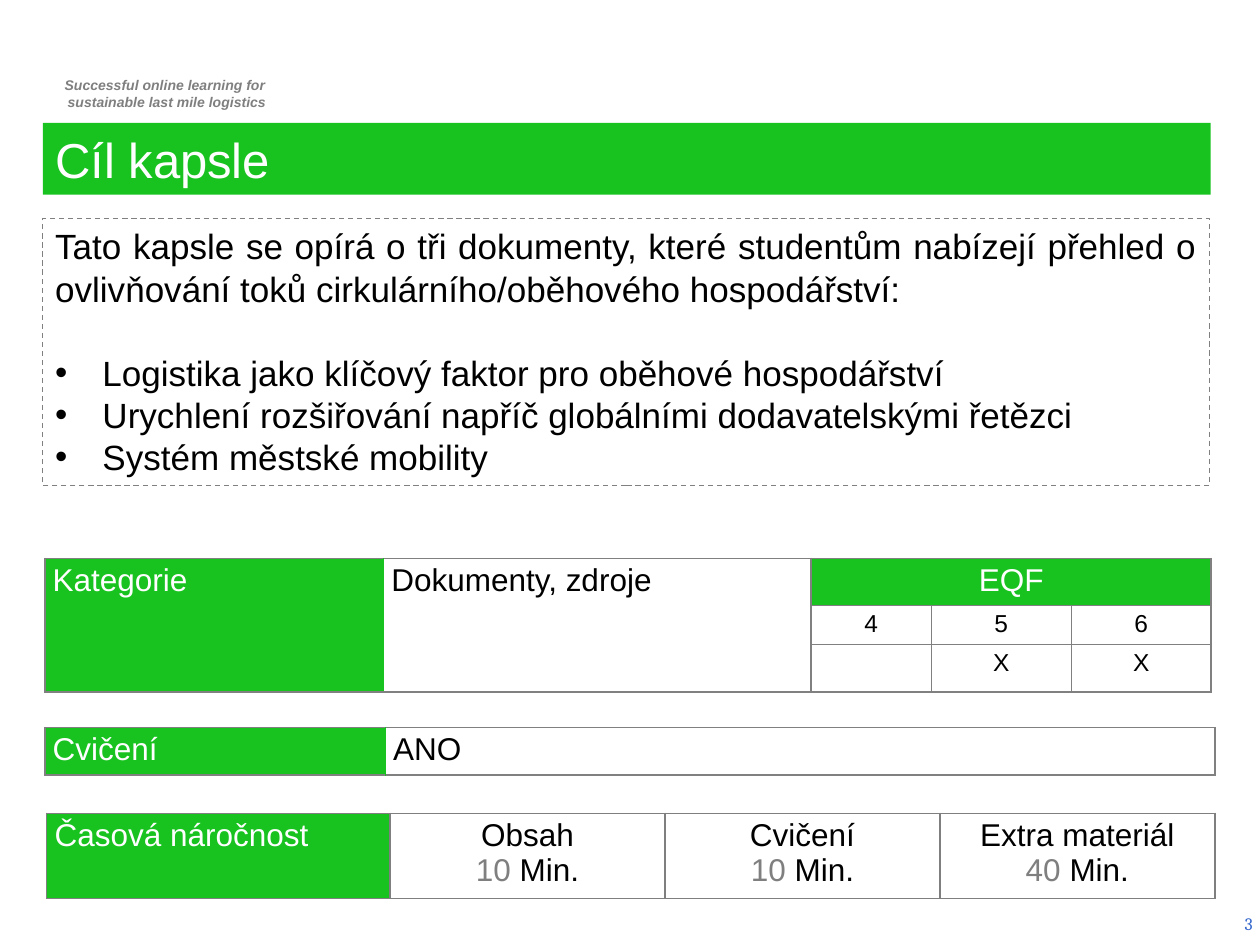
"""Build the slide on the goal of the capsule, with its category, exercise and time tables."""
from lxml import etree
from pptx import Presentation, util as u
from pptx.dml import color
from pptx.enum import dml, shapes, text
from pptx.oxml import ns

Pt = u.Pt
COLORS = {"green": "18C320", "gray": "7F7F7F", "line": "808080", "black": "000000",
          "white": "FFFFFF", "blue": "3366CC"}
ALIGN = text.PP_ALIGN


def write(frame, lines, align, size, name="Arial", **formats):
    """Fill a text frame with lines, each a list of (text, color) spans."""
    for index, line in enumerate(lines):
        para = frame.paragraphs[0] if index == 0 else frame.add_paragraph()
        para.alignment = align
        for words, tone in line:
            span = para.add_run()
            span.text = words
            span.font.color.rgb = color.RGBColor.from_string(COLORS[tone])
            for key, value in {"size": Pt(size), "name": name, **formats}.items():
                setattr(span.font, key, value)


def add_table(left, top, widths, heights, entries, merges, line, seam):
    """Draw a bordered table from (row, column, lines, align, size, fill) entries."""
    frame = page.shapes.add_table(len(heights), len(widths), Pt(left), Pt(top),
                                  Pt(sum(widths)), Pt(sum(heights)))
    table = frame.table
    for flag in ("first_row", "horz_banding"):
        setattr(table, flag, False)
    for column, width in zip(table.columns, widths):
        column.width = Pt(width)
    for row, height in zip(table.rows, heights):
        row.height = Pt(height)
    for r in range(len(heights)):
        for c in range(len(widths)):
            cell = table.cell(r, c)
            for side, margin in {"left": 4.5, "right": 4.5, "top": 2.7, "bottom": 2.7}.items():
                setattr(cell, f"margin_{side}", Pt(margin))
            props = cell._tc.get_or_add_tcPr()
            for edge in ("lnL", "lnR", "lnT", "lnB"):
                tone = seam if (c, edge) in ((0, "lnR"), (1, "lnL")) else line
                border = etree.SubElement(props, ns.qn(f"a:{edge}"), w=str(Pt(1)))
                paint = etree.SubElement(border, ns.qn("a:solidFill"))
                etree.SubElement(paint, ns.qn("a:srgbClr"), val=COLORS[tone])
            cell.fill.background()
    for start, end in merges:
        table.cell(*start).merge(table.cell(*end))
    for r, c, lines, align, size, fill in entries:
        cell = table.cell(r, c)
        write(cell.text_frame, lines, align, size)
        if fill:
            cell.fill.solid()
            cell.fill.fore_color.rgb = color.RGBColor.from_string(COLORS[fill])


deck = Presentation()
deck.slide_width, deck.slide_height = Pt(720), Pt(540)
page = deck.slides.add_slide(deck.slide_layouts[6])

tagline = page.shapes.add_textbox(Pt(20.9), Pt(40.3), Pt(146.2), Pt(26.6)).text_frame
tagline.word_wrap = True
write(tagline, [[("Successful online learning for ", "gray")],
                [("sustainable last mile logistics", "gray")]],
      ALIGN.CENTER, 8, bold=True, italic=True)
for para in tagline.paragraphs:
    para._p.get_or_add_pPr().set("marL", str(Pt(2.9)))

number = page.shapes.add_textbox(Pt(555.1), Pt(513.4), Pt(167.8), Pt(28.8)).text_frame
number.word_wrap = True
number.vertical_anchor = text.MSO_ANCHOR.MIDDLE
write(number, [[("3", "blue")]], ALIGN.RIGHT, 10, "Cambria")

title = page.shapes.add_shape(shapes.MSO_SHAPE.RECTANGLE, Pt(24.5), Pt(70.2), Pt(667.4), Pt(41))
title.fill.solid()
title.fill.fore_color.rgb = color.RGBColor.from_string(COLORS["green"])
title.line.fill.background()
write(title.text_frame, [[("Cíl kapsle", "white")]], ALIGN.LEFT, 28)

goal = page.shapes.add_shape(shapes.MSO_SHAPE.RECTANGLE, Pt(24.5), Pt(125), Pt(666.7), Pt(152.6))
goal.fill.background()
goal.line.color.rgb = color.RGBColor.from_string(COLORS["line"])
goal.line.width = Pt(0.75)
goal.line.dash_style = dml.MSO_LINE.DASH
intro = ("Tato kapsle se opírá o tři dokumenty, které studentům nabízejí přehled o "
         "ovlivňování toků cirkulárního/oběhového hospodářství:")
topics = ["Logistika jako klíčový faktor pro oběhové hospodářství",
          "Urychlení rozšiřování napříč globálními dodavatelskými řetězci",
          "Systém městské mobility"]
write(goal.text_frame, [[(words, "black")] for words in [intro, *topics]], ALIGN.JUSTIFY, 20)
for para in goal.text_frame.paragraphs:
    para.line_spacing = Pt(24)
for para in goal.text_frame.paragraphs[1:]:
    props = para._p.get_or_add_pPr()
    props.set("marL", str(Pt(27)))
    props.set("indent", str(Pt(-27)))
    etree.SubElement(props, ns.qn("a:buFont"), typeface="Arial")
    etree.SubElement(props, ns.qn("a:buChar"), char="•")
goal.text_frame.paragraphs[1].space_before = Pt(24)

for box in (title, goal):
    box.shadow.inherit = False
    box.text_frame.word_wrap = True
    box.text_frame.vertical_anchor = text.MSO_ANCHOR.TOP

levels = [(r, c, [[(words, "black")]], ALIGN.CENTER, 14, None)
          for r, c, words in [(1, 2, "4"), (1, 3, "5"), (1, 4, "6"), (2, 3, "X"), (2, 4, "X")]]
add_table(25.6, 319, [193.6, 244.4, 68.6, 80, 80], [26.9, 22.3, 26.9],
          [(0, 0, [[("Kategorie", "white")]], ALIGN.JUSTIFY, 18, "green"),
           (0, 1, [[("Dokumenty, zdroje", "black")]], ALIGN.JUSTIFY, 18, None),
           (0, 2, [[("EQF", "white")]], ALIGN.CENTER, 18, "green"), *levels],
          [((0, 0), (2, 0)), ((0, 1), (2, 1)), ((0, 2), (0, 4))], "line", "green")

add_table(25.6, 415.8, [194.6, 474], [27],
          [(0, 0, [[("Cvičení", "white")]], ALIGN.JUSTIFY, 18, "green"),
           (0, 1, [[("ANO", "black")]], ALIGN.JUSTIFY, 18, None)], [], "line", "green")

times = [("Obsah", "10"), ("Cvičení", "10"), ("Extra materiál", "40")]
add_table(26.7, 464.8, [196.2, 157.1, 157.1, 157.1], [48.6],
          [(0, 0, [[("Časová náročnost", "white")]], ALIGN.JUSTIFY, 18, "green")]
          + [(0, c, [[(label, "black")], [(f"{minutes} ", "gray"), ("Min.", "black")]],
              ALIGN.CENTER, 18, None) for c, (label, minutes) in enumerate(times, 1)],
          [], "gray", "gray")

deck.save("out.pptx")
